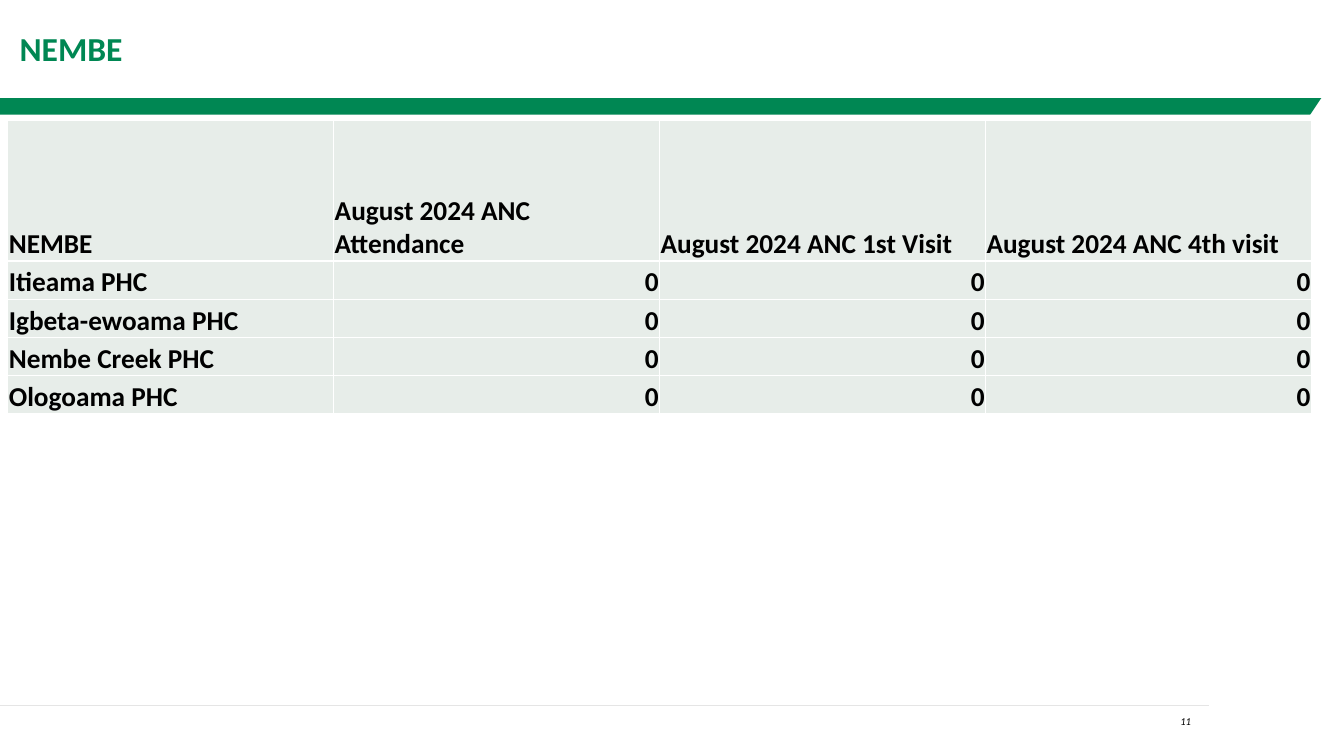
from dataclasses import dataclass

from lxml.etree import SubElement
from pptx import Presentation
from pptx.dml.color import RGBColor
from pptx.enum.shapes import MSO_CONNECTOR, MSO_SHAPE
from pptx.enum.text import MSO_ANCHOR, PP_ALIGN
from pptx.oxml.ns import qn
from pptx.util import Inches, Pt

TITLE = "NEMBE"
PAGE_NUMBER = "11"
HEADINGS = ["NEMBE", "August 2024 ANC Attendance",
            "August 2024 ANC 1st Visit", "August 2024 ANC 4th visit"]
CLINICS = [
    ("Itieama PHC", 0, 0, 0),
    ("Igbeta-ewoama PHC", 0, 0, 0),
    ("Nembe Creek PHC", 0, 0, 0),
    ("Ologoama PHC", 0, 0, 0),
]

SLIDE_WIDTH, SLIDE_HEIGHT = 13.69, 7.5
TABLE_LEFT, TABLE_TOP = 0.08, 1.23
COLUMN_WIDTH, HEADING_HEIGHT, CLINIC_HEIGHT = 3.32, 1.43, 0.39


@dataclass(frozen=True)
class Theme:
    font: str = "Calibri"
    green: str = "008753"
    white: str = "FFFFFF"
    black: str = "000000"
    rule: str = "E5E5E5"
    cell: str = "E7EDE9"
    title_size: float = 24.6
    table_size: float = 20
    page_size: float = 7.7


THEME = Theme()


def rgb(color):
    return RGBColor.from_string(color)


def write(frame, text, size, color, align=PP_ALIGN.LEFT, bold=False, italic=False):
    frame.text = text
    paragraph = frame.paragraphs[0]
    paragraph.alignment = align
    font = paragraph.runs[0].font
    font.name, font.size, font.bold, font.italic = THEME.font, Pt(size), bold, italic
    font.color.rgb = rgb(color)


def add_plain_shape(slide, kind, box, color):
    shape = slide.shapes.add_shape(kind, *map(Inches, box))
    shape.shadow.inherit = False
    shape.fill.solid()
    shape.fill.fore_color.rgb = rgb(color)
    shape.line.fill.background()


def add_frame(slide):
    """Draw the slanted band under the title and the footer rule."""
    add_plain_shape(slide, MSO_SHAPE.RECTANGLE, (0, 1, 13.46, 0.17), THEME.green)
    add_plain_shape(slide, MSO_SHAPE.ISOSCELES_TRIANGLE, (13.32, 1, 0.28, 0.21), THEME.white)
    rule = slide.shapes.add_connector(
        MSO_CONNECTOR.STRAIGHT, 0, Inches(7.19), Inches(12.32), Inches(7.19))
    rule.line.color.rgb = rgb(THEME.rule)
    rule.line.width = Pt(1)
    SubElement(rule._element.spPr, qn("a:effectLst"))


def add_title(slide):
    title = slide.shapes.title
    title.left, title.top = 0, 0
    title.width, title.height = Inches(SLIDE_WIDTH), Inches(0.99)
    frame = title.text_frame
    frame.margin_left = Inches(0.2)
    frame.vertical_anchor = MSO_ANCHOR.MIDDLE
    write(frame, TITLE, THEME.title_size, THEME.green, bold=True)


def add_page_number(slide):
    page = slide.shapes.add_textbox(*map(Inches, (10.95, 7.24, 1.28, 0.24)))
    page.text_frame.word_wrap = True
    write(page.text_frame, PAGE_NUMBER, THEME.page_size, THEME.black,
          PP_ALIGN.RIGHT, italic=True)


def add_borders(cell):
    properties = cell._tc.get_or_add_tcPr()
    for side in ("lnL", "lnR", "lnT", "lnB"):
        border = SubElement(properties, qn(f"a:{side}"), w=str(Pt(1)))
        fill = SubElement(border, qn("a:solidFill"))
        SubElement(fill, qn("a:srgbClr"), val=THEME.white)


def format_cell(cell, value):
    add_borders(cell)
    cell.fill.solid()
    cell.fill.fore_color.rgb = rgb(THEME.cell)
    cell.margin_left = cell.margin_right = cell.margin_top = Inches(0.01)
    cell.margin_bottom = 0
    cell.vertical_anchor = MSO_ANCHOR.BOTTOM
    align = PP_ALIGN.RIGHT if isinstance(value, int) else PP_ALIGN.LEFT
    write(cell.text_frame, str(value), THEME.table_size, THEME.black, align, bold=True)


def add_attendance(slide):
    rows = [HEADINGS, *CLINICS]
    heights = [HEADING_HEIGHT] + [CLINIC_HEIGHT] * len(CLINICS)
    table = slide.shapes.add_table(
        len(rows), len(HEADINGS), Inches(TABLE_LEFT), Inches(TABLE_TOP),
        Inches(COLUMN_WIDTH * len(HEADINGS)), Inches(sum(heights))).table
    for column in table.columns:
        column.width = Inches(COLUMN_WIDTH)
    for row, height, values in zip(table.rows, heights, rows):
        row.height = Inches(height)
        for cell, value in zip(row.cells, values):
            format_cell(cell, value)


def main():
    deck = Presentation()
    deck.slide_width, deck.slide_height = Inches(SLIDE_WIDTH), Inches(SLIDE_HEIGHT)
    slide = deck.slides.add_slide(deck.slide_layouts[5])
    add_frame(slide)
    add_title(slide)
    add_page_number(slide)
    add_attendance(slide)
    deck.save("out.pptx")


if __name__ == "__main__":
    main()
